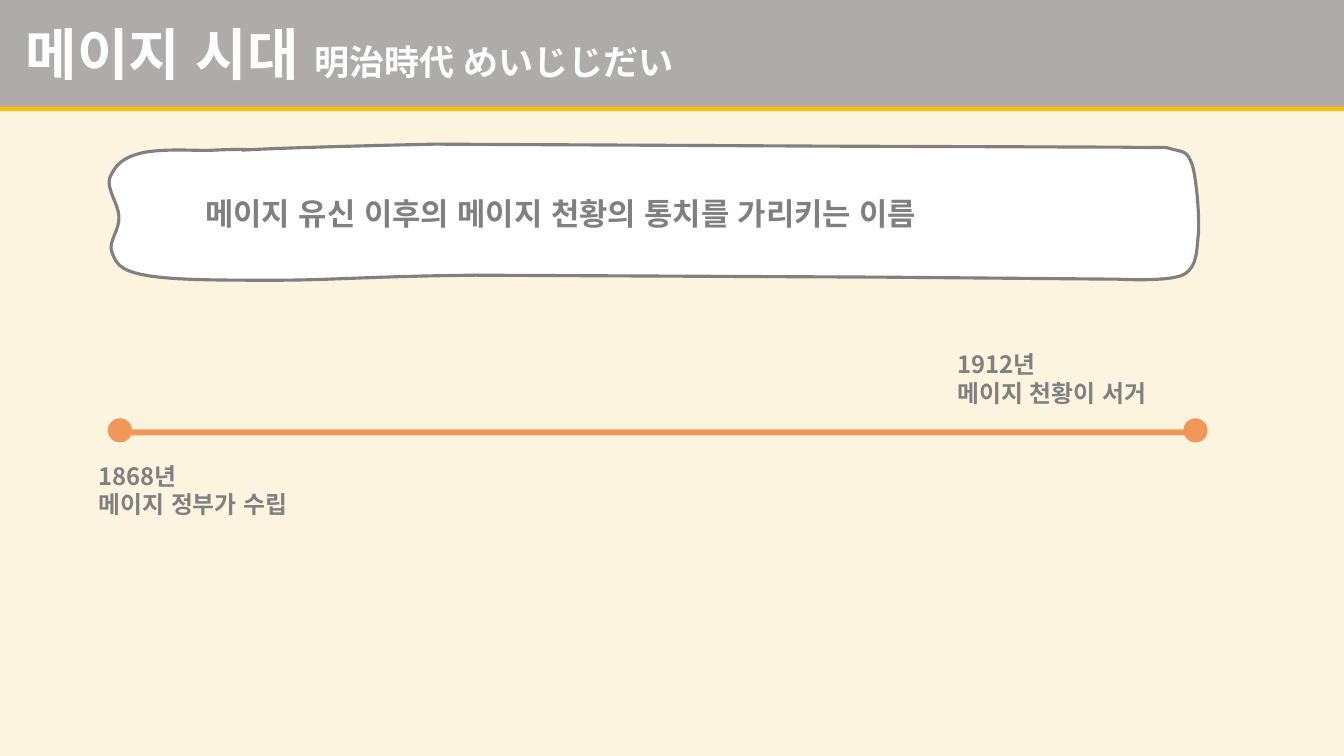
from pptx import Presentation
from pptx.dml.color import RGBColor
from pptx.enum.lang import MSO_LANGUAGE_ID as Language
from pptx.enum.shapes import MSO_SHAPE as Preset
from pptx.enum.text import MSO_ANCHOR as Anchor, MSO_AUTO_SIZE as AutoSize, PP_ALIGN as Align
from pptx.oxml.ns import qn
from pptx.util import Inches, Pt
from lxml.etree import SubElement

THEME = {
    "font": "Noto Sans CJK KR",
    "background": RGBColor.from_string("FCF4DF"),
    "header": RGBColor.from_string("AFABAB"),
    "rule": RGBColor.from_string("FFC000"),
    "white": RGBColor.from_string("FFFFFF"),
    "grey": RGBColor.from_string("808080"),
    "orange": RGBColor.from_string("F1975A"),
    "title": Pt(40), "subtitle": Pt(25), "summary": Pt(22), "event": Pt(17),
}

# The slide is a grid of 160 columns by 90 rows of square cells
COLUMNS, ROWS = 160, 90
CELL = Inches(7.5) / ROWS


def cells(*values):
    return [round(value * CELL) for value in values]


def write(paragraph, text, size, color):
    run = paragraph.add_run()
    run.text = text
    formats = {"name": THEME["font"], "size": THEME[size], "bold": True,
               "language_id": Language.KOREAN}
    for attribute, value in formats.items():
        setattr(run.font, attribute, value)
    run.font.color.rgb = THEME[color]
    east_asian = SubElement(run.font._element, qn("a:ea"))
    east_asian.set("typeface", THEME["font"])


presentation = Presentation()
presentation.slide_width, presentation.slide_height = cells(COLUMNS, ROWS)
slide = presentation.slides.add_slide(presentation.slide_layouts[5])
slide.background.fill.solid()
slide.background.fill.fore_color.rgb = THEME["background"]

# Title band
title = slide.shapes.title
title.left, title.top, title.width, title.height = cells(0, 0, COLUMNS, 12.7)
title.fill.solid()
title.fill.fore_color.rgb = THEME["header"]
frame_format = {"vertical_anchor": Anchor.MIDDLE, "auto_size": AutoSize.NONE, "word_wrap": True}
for attribute, value in frame_format.items():
    setattr(title.text_frame, attribute, value)
heading = title.text_frame.paragraphs[0]
heading.alignment = Align.LEFT
write(heading, " 메이지 시대 ", "title", "white")
write(heading, "明治時代 めいじじだい", "subtitle", "white")

# Yellow rule under the band, cast as a sharp shadow
effects = SubElement(title._element.spPr, qn("a:effectLst"))
shadow = SubElement(effects, qn("a:outerShdw"), blurRad="0", dist=str(Pt(3)),
                    dir="5400000", algn="t", rotWithShape="0")
SubElement(shadow, qn("a:srgbClr"), val=str(THEME["rule"]))

# Hand-drawn banner: each step is a line end, or two controls and a curve end
banner_start = (28.8, 17.88)
banner_steps = [
    [(34.56, 17.52), (51.84, 17.16), (51.84, 17.16)],
    [(97.92, 17.4)],
    [(133.44, 17.52)],
    [(140.4, 17.64), (138.12, 17.4), (139.56, 17.76)],
    [(141, 18.12), (141.36, 18), (141.96, 19.68)],
    [(142.44, 21.36), (142.8, 25.56), (142.68, 27.72)],
    [(142.44, 29.88), (142.56, 31.68), (141, 32.64)],
    [(139.44, 33.6), (133.08, 33.24), (133.08, 33.24)],
    [(105.24, 33)],
    [(56.64, 32.76)],
    [(44.52, 32.88), (39.36, 33.36), (32.76, 33.36)],
    [(26.28, 33.36), (20.52, 33.36), (17.28, 32.76)],
    [(14.04, 32.16), (13.8, 31.2), (13.32, 30)],
    [(12.84, 28.8), (14.28, 27.36), (14.16, 25.8)],
    [(14.16, 24.36), (12.6, 22.44), (13.08, 21.12)],
    [(13.68, 19.92), (14.28, 18.72), (17.28, 18.12)],
    [(20.28, 17.64), (23.52, 18), (25.44, 17.88)],
    [(27.48, 17.76), (31.08, 17.76), (28.8, 17.88)],
]
builder = slide.shapes.build_freeform(*cells(*banner_start))
builder.add_line_segments([cells(*step[-1]) for step in banner_steps], close=True)
banner = builder.convert_to_shape()

# Bend the straight segments that have control points
segments = list(banner._element.iter(qn("a:lnTo")))
for segment, step in zip(segments, banner_steps):
    if len(step) == 3:
        curve = segment.makeelement(qn("a:cubicBezTo"))
        for point in step:
            x, y = cells(*point)
            SubElement(curve, qn("a:pt"), x=str(x - banner.left), y=str(y - banner.top))
        segment.getparent().replace(segment, curve)
banner.shadow.inherit = False
banner.fill.solid()
banner.fill.fore_color.rgb = THEME["white"]
banner.line.color.rgb = THEME["grey"]
banner.line.width = Pt(2.25)

# Timeline end dots and bar
DOT = 2.88
timeline = [
    (Preset.OVAL, (12.84, 49.8, DOT, DOT)),
    (Preset.OVAL, (140.88, 49.8, DOT, DOT)),
    (Preset.RECTANGLE, (13.56, 51.12, 129, 0.72)),
]
for preset, box in timeline:
    shape = slide.shapes.add_shape(preset, *cells(*box))
    shape.shadow.inherit = False
    shape.fill.solid()
    shape.fill.fore_color.rgb = THEME["orange"]
    shape.line.fill.background()

# Summary in the banner and the two timeline events
texts = [
    ((23.28, 22.56, 118.32, 5.52), "summary", ["메이지 유신 이후의 메이지 천황의 통치를 가리키는 이름"]),
    ((10.56, 54.36, 37.92, 7.92), "event", ["1868년", "메이지 정부가 수립"]),
    ((112.8, 41.04, 37.92, 7.92), "event", ["1912년", "메이지 천황이 서거"]),
]
for box, size, lines in texts:
    text_frame = slide.shapes.add_textbox(*cells(*box)).text_frame
    text_frame.word_wrap = True
    text_frame.auto_size = AutoSize.SHAPE_TO_FIT_TEXT
    for index, line in enumerate(lines):
        paragraph = text_frame.add_paragraph() if index else text_frame.paragraphs[0]
        write(paragraph, line, size, "grey")

presentation.save("out.pptx")
